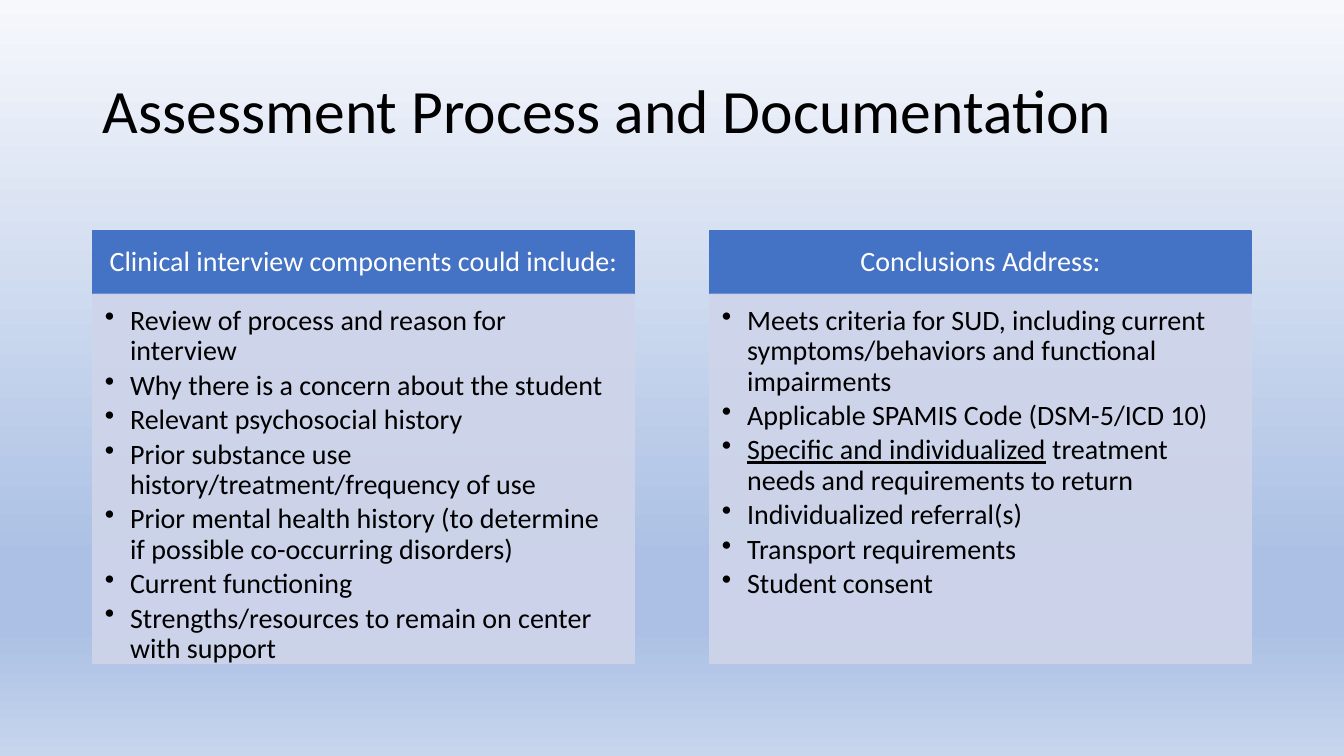
from lxml import etree
from pptx import Presentation
from pptx.dml.color import RGBColor
from pptx.enum import shapes, text
from pptx.oxml.ns import qn
from pptx.util import Inches, Pt

BLACK = RGBColor(0x00, 0x00, 0x00)
WHITE = RGBColor(0xFF, 0xFF, 0xFF)
HEADER_BLUE = RGBColor(0x44, 0x72, 0xC4)
BODY_LAVENDER = RGBColor(0xCF, 0xD5, 0xEA)
BACKDROP_STOPS = [
    (0, RGBColor(0xF6, 0xF8, 0xFC)),
    (74, RGBColor(0xAB, 0xC0, 0xE4)),
    (83, RGBColor(0xAB, 0xC0, 0xE4)),
    (100, RGBColor(0xC7, 0xD5, 0xED)),
]

# Each bullet is a list of (words, underlined) runs
COLUMNS = [
    ("Clinical interview components could include:", [
        [("Review of process and reason for interview", False)],
        [("Why there is a concern about the student", False)],
        [("Relevant psychosocial history", False)],
        [("Prior substance use history/treatment/frequency of use", False)],
        [("Prior mental health history (to determine if possible co-occurring disorders)", False)],
        [("Current functioning", False)],
        [("Strengths/resources to remain on center with support", False)],
    ]),
    ("Conclusions Address:", [
        [("Meets criteria for SUD, including current symptoms/behaviors and functional impairments", False)],
        [("Applicable SPAMIS Code (DSM-5/ICD 10)", False)],
        [("Specific and individualized", True), (" treatment needs and requirements to return", False)],
        [("Individualized referral(s)", False)],
        [("Transport requirements", False)],
        [("Student consent", False)],
    ]),
]

LEFT, COLUMN_WIDTH, COLUMN_STEP = 0.92, 5.37, 6.12
HEADER_TOP, HEADER_HEIGHT, BODY_HEIGHT = 2.29, 0.63, 3.66


def add_panel(left, top, height, color, insets, anchor, alpha=None):
    panel = slide.shapes.add_shape(
        shapes.MSO_SHAPE.RECTANGLE, Inches(left), Inches(top), Inches(COLUMN_WIDTH), Inches(height))
    panel.shadow.inherit = False
    panel.fill.solid()
    panel.fill.fore_color.rgb = color
    panel.line.color.rgb = color
    panel.line.width = Pt(1)
    if alpha:
        for tint in panel.element.spPr.iter(qn("a:srgbClr")):
            etree.SubElement(tint, qn("a:alpha"), val=str(alpha * 1000))
    frame = panel.text_frame
    frame.word_wrap = True
    frame.vertical_anchor = anchor
    frame.margin_left, frame.margin_top, frame.margin_right, frame.margin_bottom = map(Inches, insets)
    return frame


def write_runs(paragraph, runs, size, color, align, space_after=0):
    paragraph.alignment = align
    paragraph.line_spacing = 0.9
    paragraph.space_after = Pt(space_after)
    for words, underlined in runs:
        run = paragraph.add_run()
        run.text = words
        run.font.name = "Calibri"
        run.font.size = Pt(size)
        run.font.color.rgb = color
        if underlined:
            run.font.underline = True


deck = Presentation()
deck.slide_width, deck.slide_height = Inches(13.33), Inches(7.5)
slide = deck.slides.add_slide(deck.slide_layouts[6])

# Background gradient, running downwards
backdrop = slide.background.fill
backdrop.gradient()
backdrop.gradient_angle = 270
stop_list = slide.element.find(".//" + qn("a:gsLst"))
for default_stop in list(stop_list):
    stop_list.remove(default_stop)
for percent, color in BACKDROP_STOPS:
    stop = etree.SubElement(stop_list, qn("a:gs"), pos=str(percent * 1000))
    etree.SubElement(stop, qn("a:srgbClr"), val=str(color))

# Title
title = slide.shapes.add_textbox(Inches(LEFT), Inches(0.4), Inches(11.5), Inches(1.45)).text_frame
title.word_wrap = True
title.vertical_anchor = text.MSO_ANCHOR.MIDDLE
write_runs(title.paragraphs[0], [("Assessment Process and Documentation", False)],
           44, BLACK, text.PP_ALIGN.LEFT)

# Two columns: a header above a bulleted body
for index, (heading, bullets) in enumerate(COLUMNS):
    left = LEFT + index * COLUMN_STEP
    header = add_panel(left, HEADER_TOP, HEADER_HEIGHT, HEADER_BLUE,
                       (0.16, 0.09, 0.16, 0.09), text.MSO_ANCHOR.MIDDLE)
    write_runs(header.paragraphs[0], [(heading, False)], 20, WHITE, text.PP_ALIGN.CENTER)

    body = add_panel(left, HEADER_TOP + HEADER_HEIGHT, BODY_HEIGHT, BODY_LAVENDER,
                     (0.12, 0.12, 0.16, 0.17), text.MSO_ANCHOR.TOP, alpha=90)
    for number, runs in enumerate(bullets):
        item = body.add_paragraph() if number else body.paragraphs[0]
        write_runs(item, runs, 20, BLACK, text.PP_ALIGN.LEFT, space_after=3)
        properties = item._p.get_or_add_pPr()
        properties.set("marL", str(Inches(0.25)))
        properties.set("indent", str(-Inches(0.25)))
        etree.SubElement(properties, qn("a:buChar"), char="•")

deck.save("out.pptx")
